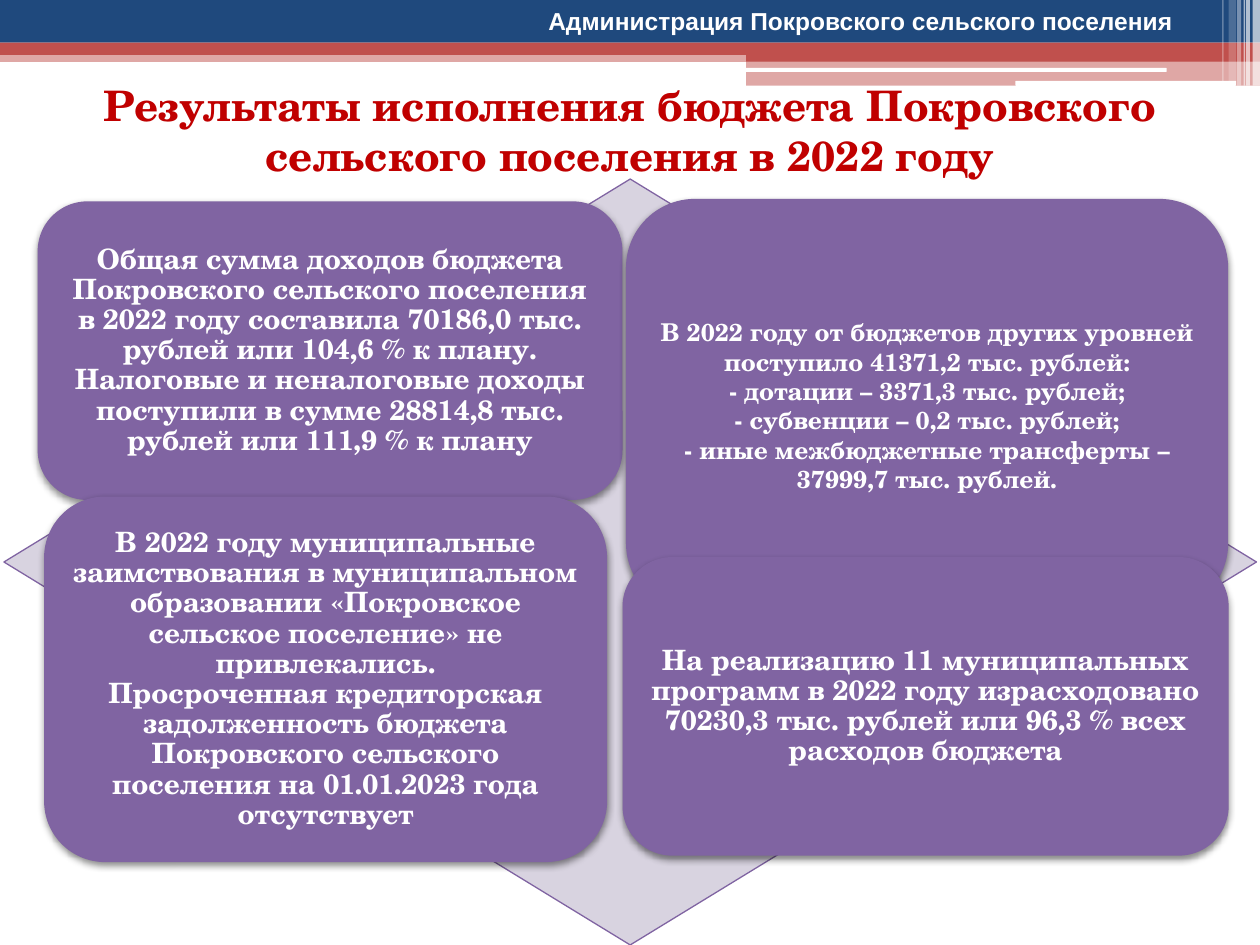
import pptx
import pptx.util
import pptx.dml.color
import pptx.enum.shapes
import pptx.enum.text
import lxml.etree

Cm = pptx.util.Cm
Pt = pptx.util.Pt
RGBColor = pptx.dml.color.RGBColor
SHAPE = pptx.enum.shapes.MSO_SHAPE

NAVY = RGBColor(0x1F, 0x49, 0x7D)
RED = RGBColor(0xC0, 0x50, 0x4D)
TITLE_RED = RGBColor(0xC0, 0x00, 0x00)
PURPLE = RGBColor(0x80, 0x64, 0xA2)
PALE = RGBColor(0xD8, 0xD3, 0xE0)
WHITE = RGBColor(0xFF, 0xFF, 0xFF)
SERIF = "TeX Gyre Schola"
SANS = "Arial"
DRAWING = "{http://schemas.openxmlformats.org/drawingml/2006/main}"

BANDS = [
    (0, 1.02, 25.4, 0.23, RED, 50),
    (0, 0, 25.4, 0.86, NAVY, 100),
    (0, 0.86, 25.4, 0.25, RED, 100),
    (15.04, 0.99, 10.36, 0.25, RED, 100),
    (15.04, 1.22, 10.36, 0.51, RED, 50),
]
RULES = [(15.01, 1.37, 8.51, 0.08), (20.47, 1.63, 4.45, 0.1)]
STRIPES = [
    (25.25, 0.15, 1.73, 65),
    (25.12, 0.08, 1.73, 65),
    (25.07, 0.03, 1.73, 60),
    (24.94, 0.08, 1.73, 40),
    (24.77, 0.15, 1.63, 20),
    (24.64, 0.03, 1.63, 30),
]
CARDS = [
    ((0.68, 0.45, 11.79, 6.02), 16, 0.9, 0.18, [
        "Общая сумма доходов бюджета Покровского сельского поселения в 2022 году "
        "составила 70186,0 тыс. рублей или 104,6 % к плану.",
        "Налоговые и неналоговые доходы поступили в сумме 28814,8 тыс. рублей "
        "или 111,9 % к плану",
    ]),
    ((12.54, 0.4, 12.14, 8.33), 14, 1.0, 0.15, [
        "В 2022 году от бюджетов других уровней поступило 41371,2 тыс. рублей:",
        "- дотации – 3371,3 тыс. рублей;",
        "- субвенции – 0,2 тыс. рублей;",
        "- иные межбюджетные трансферты –\v37999,7 тыс. рублей.",
    ]),
    ((0.81, 6.4, 11.35, 7.37), 16, 0.9, 0.18, [
        "В 2022 году муниципальные заимствования в муниципальном образовании "
        "«Покровское сельское поселение» не привлекались.",
        "Просроченная кредиторская задолженность бюджета Покровского сельского "
        "поселения на 01.01.2023 года отсутствует",
    ]),
    ((12.47, 7.62, 12.22, 6.02), 16, 0.9, 0.18, [
        "На реализацию 11 муниципальных программ в 2022 году израсходовано "
        "70230,3 тыс. рублей или 96,3 % всех расходов бюджета",
    ]),
]


def add_block(page, kind, box, color, opacity=100):
    """Add a filled shape without outline or shadow and return it."""
    block = page.shapes.add_shape(kind, *map(Cm, box))
    block.shadow.inherit = False
    block.fill.solid()
    block.fill.fore_color.rgb = color
    block.line.fill.background()
    if opacity < 100:
        tint = block.fill._xPr.find(f"{DRAWING}solidFill/{DRAWING}srgbClr")
        lxml.etree.SubElement(tint, f"{DRAWING}alpha", val=str(opacity * 1000))
    return block


def add_shadow(block):
    """Give a shape a soft shadow that falls downwards."""
    effects = block.element.spPr.find(f"{DRAWING}effectLst")
    shadow = lxml.etree.SubElement(
        effects, f"{DRAWING}outerShdw", blurRad=str(Pt(4)), dist=str(Pt(2)),
        dir="5400000", rotWithShape="0")
    shade = lxml.etree.SubElement(shadow, f"{DRAWING}srgbClr", val="000000")
    lxml.etree.SubElement(shade, f"{DRAWING}alpha", val="45000")


def write_text(block, lines, font, size, color, spacing=1.0):
    """Fill a shape with centred bold paragraphs."""
    frame = block.text_frame
    frame.word_wrap = True
    frame.text = "\n".join(lines)
    for para in frame.paragraphs:
        para.alignment = pptx.enum.text.PP_ALIGN.CENTER
        para.line_spacing = spacing
        for span in para.runs:
            span.font.name = font
            span.font.size = Pt(size)
            span.font.bold = True
            span.font.color.rgb = color


def draw_banner(page, box):
    """Draw the coloured bands, white rules and corner stripes."""
    left, top = box[:2]
    for x, y, width, height, color, opacity in BANDS:
        add_block(page, SHAPE.RECTANGLE, (left + x, top + y, width, height), color, opacity)
    for x, y, width, height in RULES:
        add_block(page, SHAPE.ROUNDED_RECTANGLE, (left + x, top + y, width, height), WHITE)
    for x, width, height, opacity in STRIPES:
        add_block(page, SHAPE.RECTANGLE, (left + x, top, width, height), WHITE, opacity)


def draw_matrix(page, box):
    """Draw the diamond with the four result cards over it."""
    left, top = box[:2]
    diamond = add_block(page, SHAPE.DIAMOND, box, PALE)
    diamond.line.color.rgb = PURPLE
    diamond.line.width = Pt(0.75)
    for (x, y, width, height), size, spacing, margin, lines in CARDS:
        card = add_block(page, SHAPE.ROUNDED_RECTANGLE, (left + x, top + y, width, height), PURPLE)
        add_shadow(card)
        frame = card.text_frame
        frame.margin_left = frame.margin_right = Cm(margin)
        frame.margin_top = frame.margin_bottom = Cm(margin)
        frame.vertical_anchor = pptx.enum.text.MSO_ANCHOR.MIDDLE
        write_text(card, lines, SERIF, size, WHITE, spacing)


def draw_heading(page, box, line, font, size, color):
    """Place one centred heading in its box."""
    heading = page.shapes.add_textbox(*map(Cm, box))
    write_text(heading, [line], font, size, color)


def main():
    """Build the slide and save it."""
    deck = pptx.Presentation()
    deck.slide_width = Cm(25.4)
    deck.slide_height = Cm(19.05)
    page = deck.slides.add_slide(deck.slide_layouts[6])
    draw_banner(page, (0, 0, 25.4, 1.73))
    draw_matrix(page, (0.08, 3.61, 25.25, 15.44))
    draw_heading(page, (0, 1.47, 25.4, 2.31),
                 "Результаты исполнения бюджета Покровского сельского поселения в 2022 году",
                 SERIF, 24, TITLE_RED)
    draw_heading(page, (9.3, 0, 16.1, 0.86),
                 "Администрация Покровского сельского поселения", SANS, 14, WHITE)
    deck.save("out.pptx")


if __name__ == "__main__":
    main()
